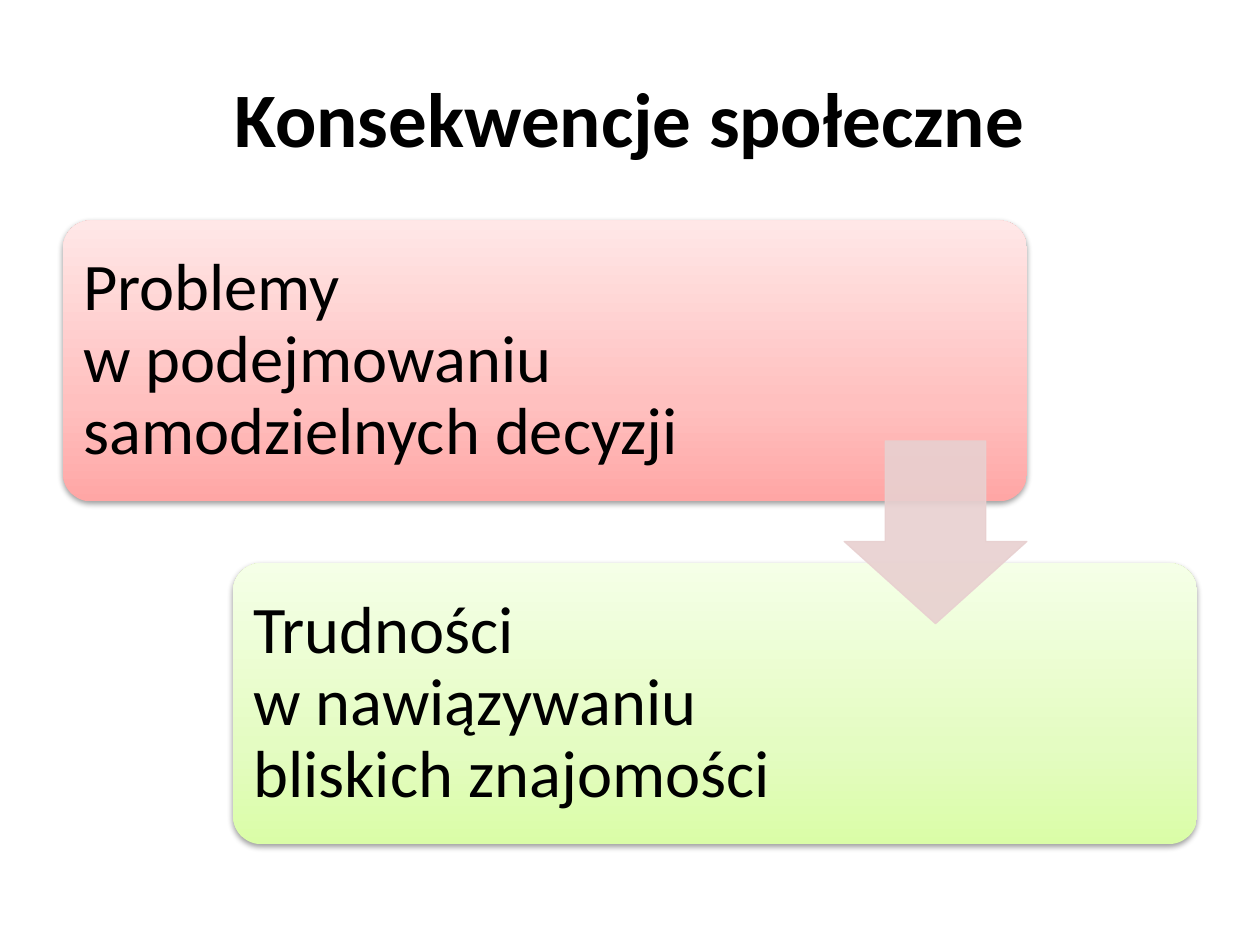
from copy import deepcopy
from dataclasses import dataclass

from lxml import etree
from pptx import Presentation
from pptx.dml.color import RGBColor
from pptx.enum import shapes as sh, text as tx
from pptx.oxml import ns
from pptx.util import Inches, Pt


@dataclass(frozen=True)
class Theme:
    font: str = "Calibri"
    ink: str = "000000"
    head: int = 44
    body: int = 38
    red: tuple = ("FFA6A5", "FFC0BF", "FFE7E7")
    green: tuple = ("DAFDA7", "E4FCC2", "F5FFE7")
    stops: tuple = (0, 0.35, 1)
    arrow: str = "E8D0D0"
    alpha: int = 90


THEME = Theme()


def sub(node, tag, **attrs):
    return etree.SubElement(node, ns.qn(tag), attrs)


def style(par, size, bold=False):
    for run in par.runs:
        font = run.font
        font.name, font.size, font.bold = THEME.font, Pt(size), bold
        font.color.rgb = RGBColor.from_string(THEME.ink)


def blend(shape, tones):
    fill = shape.fill
    fill.gradient()
    fill.gradient_angle = 90
    stops = shape._element.spPr.find(".//" + ns.qn("a:gsLst"))
    stops.append(deepcopy(stops[-1]))
    for stop, tone, spot in zip(fill.gradient_stops, tones, THEME.stops):
        stop.color.rgb = RGBColor.from_string(tone)
        stop.position = spot


def shade(shape):
    shape.shadow.inherit = False
    list_ = shape._element.spPr.find(ns.qn("a:effectLst"))
    drop = sub(list_, "a:outerShdw", blurRad=str(Pt(3.1)), dist=str(Pt(1.6)),
               dir="5400000", rotWithShape="0")
    tone = sub(drop, "a:srgbClr", val="000000")
    sub(tone, "a:alpha", val="38000")


def add_title(slide, box, words):
    title = slide.shapes.title
    title.left, title.top, title.width, title.height = map(Inches, box)
    frame = title.text_frame
    frame.text = words
    frame.vertical_anchor = tx.MSO_ANCHOR.MIDDLE
    par = frame.paragraphs[0]
    par.alignment = tx.PP_ALIGN.CENTER
    style(par, THEME.head, True)


def add_card(group, box, width, words, tones):
    left, top, _, high = box
    card = group.shapes.add_shape(
        sh.MSO_SHAPE.ROUNDED_RECTANGLE, *map(Inches, box))
    card.adjustments[0] = 0.1
    card.line.fill.background()
    blend(card, tones)
    shade(card)

    label = group.shapes.add_textbox(*map(Inches, (left, top, width, high)))
    frame = label.text_frame
    frame.word_wrap = True
    frame.vertical_anchor = tx.MSO_ANCHOR.MIDDLE
    frame.margin_left = frame.margin_right = Inches(0.16)
    frame.margin_top = frame.margin_bottom = Inches(0.16)
    par = frame.paragraphs[0]
    par.text = words
    par.line_spacing = 0.9
    style(par, THEME.body)


def add_arrow(group, box):
    arrow = group.shapes.add_shape(sh.MSO_SHAPE.DOWN_ARROW, *map(Inches, box))
    arrow.adjustments[0], arrow.adjustments[1] = 0.55, 0.45
    arrow.shadow.inherit = False
    arrow.line.width = Pt(0.75)
    for fill in (arrow.fill, arrow.line.fill):
        fill.solid()
        fill.fore_color.rgb = RGBColor.from_string(THEME.arrow)
    for tone in arrow._element.spPr.iter(ns.qn("a:srgbClr")):
        sub(tone, "a:alpha", val=str(THEME.alpha * 1000))


def add_steps(slide, box, cards):
    left, top, width, high = box
    wide, tall, side = 7.65, 2.23, 1.45
    group = slide.shapes.add_group_shape()
    for i, (words, span, tones) in enumerate(cards):
        spot = (left + i * (width - wide), top + i * (high - tall), wide, tall)
        add_card(group, spot, span, words, tones)
    add_arrow(group, (left + wide - side, top + (high - side) / 2, side, side))


def main():
    deck = Presentation()
    deck.slide_width, deck.slide_height = Inches(10), Inches(7.5)
    slide = deck.slides.add_slide(deck.slide_layouts[5])
    add_title(slide, (0.5, 0.3, 9, 1.25), "Konsekwencje społeczne")
    add_steps(slide, (0.5, 1.75, 9, 4.95), (
        ("Problemy\vw podejmowaniu samodzielnych decyzji", 5.48, THEME.red),
        ("Trudności\vw nawiązywaniu bliskich znajomości", 4.85, THEME.green),
    ))
    deck.save("out.pptx")


if __name__ == "__main__":
    main()
